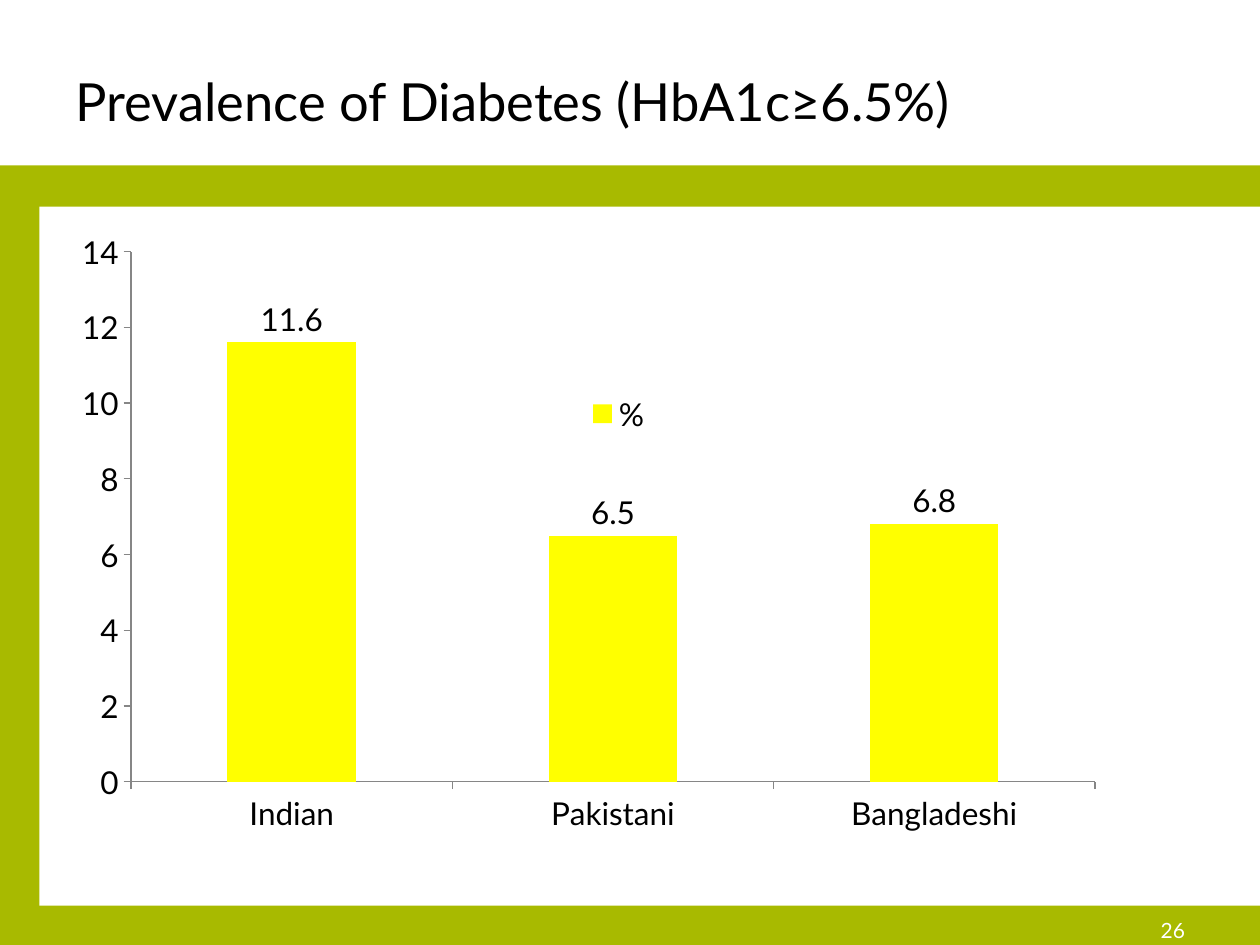
from typing import NamedTuple

from lxml import etree
from pptx import Presentation
from pptx.chart.data import CategoryChartData
from pptx.dml.color import RGBColor
from pptx.enum import chart as charts, shapes, text
from pptx.oxml import ns
from pptx.util import Pt

FONT = "Lato"
BLACK = RGBColor(0x00, 0x00, 0x00)
WHITE = RGBColor(0xFF, 0xFF, 0xFF)
GREEN = RGBColor(0xA8, 0xBA, 0x00)
YELLOW = RGBColor(0xFF, 0xFF, 0x00)
GREY = RGBColor(0x86, 0x86, 0x86)


class Area(NamedTuple):
    left: float
    top: float
    width: float
    height: float

    def lengths(self) -> list:
        return [Pt(value) for value in self]


class Panel(NamedTuple):
    area: Area
    color: RGBColor


class Label(NamedTuple):
    area: Area
    words: str
    size: float
    color: RGBColor
    align: text.PP_ALIGN


PANELS = [
    Panel(Area(0, 94.5, 720, 445.5), GREEN),
    Panel(Area(22.5, 118, 697.5, 399.5), WHITE),
]
LABELS = [
    Label(Area(36, 21.6, 527, 72), "Prevalence of Diabetes (HbA1c≥6.5%)", 30,
          BLACK, text.PP_ALIGN.LEFT),
    Label(Area(516.2, 517, 168, 28.8), "26", 12, WHITE, text.PP_ALIGN.RIGHT),
]
CHART_AREA = Area(36, 126, 648, 356.4)
PREVALENCE = {"Indian": 11.6, "Pakistani": 6.5, "Bangladeshi": 6.8}


def draw_panel(page, panel: Panel) -> None:
    shape = page.shapes.add_shape(shapes.MSO_SHAPE.RECTANGLE, *panel.area.lengths())
    shape.shadow.inherit = False
    shape.fill.solid()
    shape.fill.fore_color.rgb = panel.color
    shape.line.fill.background()


def draw_label(page, label: Label) -> None:
    frame = page.shapes.add_textbox(*label.area.lengths()).text_frame
    frame.word_wrap = True
    frame.vertical_anchor = text.MSO_ANCHOR.MIDDLE
    para = frame.paragraphs[0]
    para.text = label.words
    para.alignment = label.align
    para.font.name = FONT
    para.font.size = Pt(label.size)
    para.font.color.rgb = label.color


def place_chart_part(part, index: int, area: Area, inner: bool = False) -> None:
    """Set a manual layout, in fractions of the chart, as child number index."""
    for old in part.findall(ns.qn("c:layout")):
        part.remove(old)
    layout = etree.Element(ns.qn("c:layout"))
    part.insert(index, layout)
    manual = etree.SubElement(layout, ns.qn("c:manualLayout"))
    settings = [("layoutTarget", "inner")] if inner else []
    settings += [("xMode", "edge"), ("yMode", "edge")]
    settings += zip("xywh", area)
    for name, value in settings:
        etree.SubElement(manual, ns.qn(f"c:{name}")).set("val", str(value))


def draw_chart(page) -> None:
    data = CategoryChartData(number_format="General")
    data.categories = list(PREVALENCE)
    data.add_series("%", list(PREVALENCE.values()))
    chart = page.shapes.add_chart(
        charts.XL_CHART_TYPE.COLUMN_CLUSTERED, *CHART_AREA.lengths(), data).chart
    chart.has_title = False
    chart.font.name = FONT
    chart.font.size = Pt(18)
    chart.font.color.rgb = BLACK

    plot = chart.plots[0]
    plot.vary_by_categories = False
    plot.gap_width = 150
    fill = plot.series[0].format.fill
    fill.solid()
    fill.fore_color.rgb = YELLOW
    plot.has_data_labels = True
    plot.data_labels.show_value = True
    plot.data_labels.position = charts.XL_LABEL_POSITION.OUTSIDE_END

    for axis in (chart.category_axis, chart.value_axis):
        axis.has_major_gridlines = False
        axis.major_tick_mark = charts.XL_TICK_MARK.OUTSIDE
        axis.minor_tick_mark = charts.XL_TICK_MARK.NONE
        axis.format.line.color.rgb = GREY
        axis.format.line.width = Pt(0.75)
    chart.value_axis.minimum_scale = 0
    chart.value_axis.maximum_scale = 14
    chart.value_axis.major_unit = 2

    chart.has_legend = True
    chart.legend.position = charts.XL_LEGEND_POSITION.RIGHT
    chart.legend.include_in_layout = False
    legend = chart.element.find(".//" + ns.qn("c:legend"))
    place_chart_part(legend, 1, Area(0.46, 0.27, 0.06, 0.08))
    plot_area = chart.element.find(".//" + ns.qn("c:plotArea"))
    place_chart_part(plot_area, 0, Area(0.06, 0.05, 0.85, 0.85), inner=True)


def main() -> None:
    deck = Presentation()
    deck.slide_width, deck.slide_height = Pt(720), Pt(540)
    page = deck.slides.add_slide(deck.slide_layouts[6])
    for panel in PANELS:
        draw_panel(page, panel)
    draw_chart(page)
    for label in LABELS:
        draw_label(page, label)
    deck.save("out.pptx")


if __name__ == "__main__":
    main()
